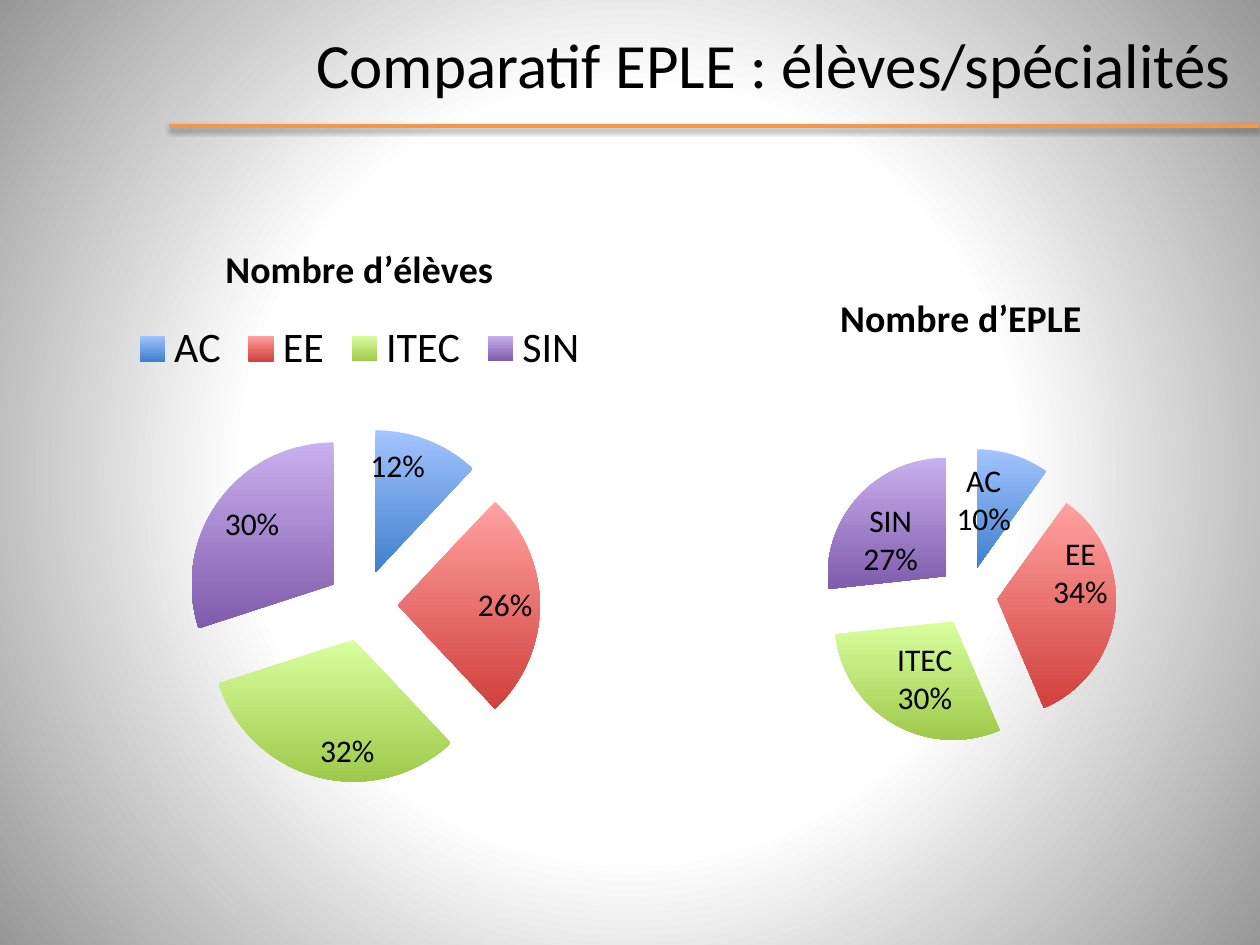
from dataclasses import dataclass

from lxml.etree import SubElement
from pptx import Presentation
from pptx.chart.chart import Chart
from pptx.chart.data import CategoryChartData
from pptx.dml.color import RGBColor
from pptx.enum.chart import XL_CHART_TYPE, XL_LABEL_POSITION, XL_LEGEND_POSITION
from pptx.enum.shapes import MSO_CONNECTOR
from pptx.enum.text import MSO_ANCHOR, PP_ALIGN
from pptx.oxml.ns import qn
from pptx.slide import Slide
from pptx.util import Emu, Pt

EMU_PER_PX = 914400 / 126
FONT = "Calibri"
COLORS = {
    "text": "000000",
    "rule": "F79646",
    "center": "FFFFFF",
    "edge": "979797",
}
SPECIALTIES = ["AC", "EE", "ITEC", "SIN"]
SLICE_GRADIENTS = [
    ("A3C4FF", "3F80CD"),
    ("FFA2A0", "D1403C"),
    ("D9FF9E", "9FC94B"),
    ("C9B0EE", "7F5BAB"),
]


@dataclass
class Box:
    left: int
    top: int
    width: int
    height: int


@dataclass
class Pie:
    title: str
    values: list[int]
    frame: Box
    plot: Box
    legend: bool
    category_labels: bool


PIES = [
    Pie("Nombre d’élèves", [12, 26, 32, 30], Box(-152, 217, 1023, 582),
        Box(185, 428, 355, 355), legend=True, category_labels=False),
    Pie("Nombre d’EPLE", [10, 34, 30, 27], Box(527, 266, 868, 566),
        Box(820, 448, 296, 296), legend=False, category_labels=True),
]


def px(length: int) -> Emu:
    return Emu(round(length * EMU_PER_PX))


def color(name: str) -> RGBColor:
    return RGBColor.from_string(COLORS[name])


def style_font(font, size: float, bold: bool = False) -> None:
    font.name = FONT
    font.size = Pt(size)
    font.bold = bold
    font.color.rgb = color("text")


def set_gradient(fill, start: str, end: str) -> None:
    fill.gradient()
    for stop, value in zip(fill.gradient_stops, (start, end)):
        stop.color.rgb = RGBColor.from_string(value)


def paint_background(slide: Slide) -> None:
    """Fill the slide with a gradient that darkens away from its center."""
    fill = slide.background.fill
    set_gradient(fill, COLORS["center"], COLORS["edge"])
    fill.gradient_stops[0].position = 0.49
    fill.gradient_stops[1].position = 1.0
    gradient = slide.element.find(".//" + qn("a:gradFill"))
    gradient.remove(gradient.find(qn("a:lin")))
    circle = SubElement(gradient, qn("a:path"), path="circle")
    SubElement(circle, qn("a:fillToRect"),
               {side: "50000" for side in ("l", "t", "r", "b")})


def add_title(slide: Slide, text: str, box: Box) -> None:
    title = slide.shapes.title
    title.left, title.top = px(box.left), px(box.top)
    title.width, title.height = px(box.width), px(box.height)
    title.text_frame.text = text
    title.text_frame.vertical_anchor = MSO_ANCHOR.MIDDLE
    paragraph = title.text_frame.paragraphs[0]
    paragraph.alignment = PP_ALIGN.CENTER
    style_font(paragraph.runs[0].font, 36)


def add_title_rule(slide: Slide, left: int, right: int, y: int) -> None:
    rule = slide.shapes.add_connector(
        MSO_CONNECTOR.STRAIGHT, px(left), px(y), px(right), px(y))
    rule.line.color.rgb = color("rule")
    rule.line.width = Pt(2)
    effects = SubElement(rule.element.spPr, qn("a:effectLst"))
    shadow = SubElement(effects, qn("a:outerShdw"), blurRad="40000",
                        dist="20000", dir="5400000", rotWithShape="0")
    shade = SubElement(shadow, qn("a:srgbClr"), val=COLORS["text"])
    SubElement(shade, qn("a:alpha"), val="38000")


def place_plot(chart: Chart, frame: Box, plot: Box) -> None:
    """Fix the plot area as fractions of the chart frame."""
    area = chart.element.find(".//" + qn("c:plotArea"))
    layout = area.find(qn("c:layout"))
    if layout is None:
        layout = area.makeelement(qn("c:layout"))
        area.insert(0, layout)
    manual = SubElement(layout, qn("c:manualLayout"))
    settings = {
        "layoutTarget": "inner",
        "xMode": "edge",
        "yMode": "edge",
        "x": round((plot.left - frame.left) / frame.width, 4),
        "y": round((plot.top - frame.top) / frame.height, 4),
        "w": round(plot.width / frame.width, 4),
        "h": round(plot.height / frame.height, 4),
    }
    for name, value in settings.items():
        SubElement(manual, qn(f"c:{name}"), val=str(value))


def explode_slices(chart: Chart, percent: int) -> None:
    series = chart.element.find(".//" + qn("c:ser"))
    explosion = series.makeelement(qn("c:explosion"), val=str(percent))
    series.find(qn("c:tx")).addnext(explosion)


def label_slices(chart: Chart, with_category: bool) -> None:
    plot = chart.plots[0]
    plot.has_data_labels = True
    labels = plot.data_labels
    labels.show_value = False
    labels.show_percentage = True
    labels.show_category_name = with_category
    labels.number_format = "0%"
    labels.number_format_is_linked = False
    labels.position = XL_LABEL_POSITION.INSIDE_END
    style_font(labels.font, 18)
    if with_category:
        last_flag = chart.element.find(".//" + qn("c:dLbls")).find(qn("c:showPercent"))
        following = last_flag.getnext()
        if following is not None and following.tag == qn("c:showBubbleSize"):
            last_flag = following
        separator = last_flag.makeelement(qn("c:separator"))
        separator.text = "\n"
        last_flag.addnext(separator)


def add_pie(slide: Slide, pie: Pie) -> None:
    data = CategoryChartData()
    data.categories = SPECIALTIES
    data.add_series("Series 1", pie.values)
    frame = pie.frame
    chart = slide.shapes.add_chart(
        XL_CHART_TYPE.PIE, px(frame.left), px(frame.top),
        px(frame.width), px(frame.height), data).chart
    style_font(chart.font, 18)

    chart.has_title = True
    chart.chart_title.include_in_layout = False
    chart.chart_title.text_frame.text = pie.title
    title_run = chart.chart_title.text_frame.paragraphs[0].runs[0]
    style_font(title_run.font, 21.6, bold=True)

    chart.has_legend = pie.legend
    if pie.legend:
        chart.legend.position = XL_LEGEND_POSITION.TOP
        chart.legend.include_in_layout = False
        style_font(chart.legend.font, 24)

    chart.plots[0].vary_by_categories = True
    explode_slices(chart, 25)
    for index, (light, dark) in enumerate(SLICE_GRADIENTS):
        fill = chart.plots[0].series[0].points[index].format.fill
        set_gradient(fill, light, dark)
        fill.gradient_angle = 270
    label_slices(chart, pie.category_labels)
    place_plot(chart, frame, pie.plot)


def main() -> None:
    presentation = Presentation()
    presentation.slide_width, presentation.slide_height = px(1260), px(945)
    slide = presentation.slides.add_slide(presentation.slide_layouts[5])
    paint_background(slide)
    add_title_rule(slide, 169, 1259, 126)
    add_title(slide, "Comparatif EPLE : élèves/spécialités", Box(287, 0, 973, 126))
    for pie in PIES:
        add_pie(slide, pie)
    presentation.save("out.pptx")


if __name__ == "__main__":
    main()
